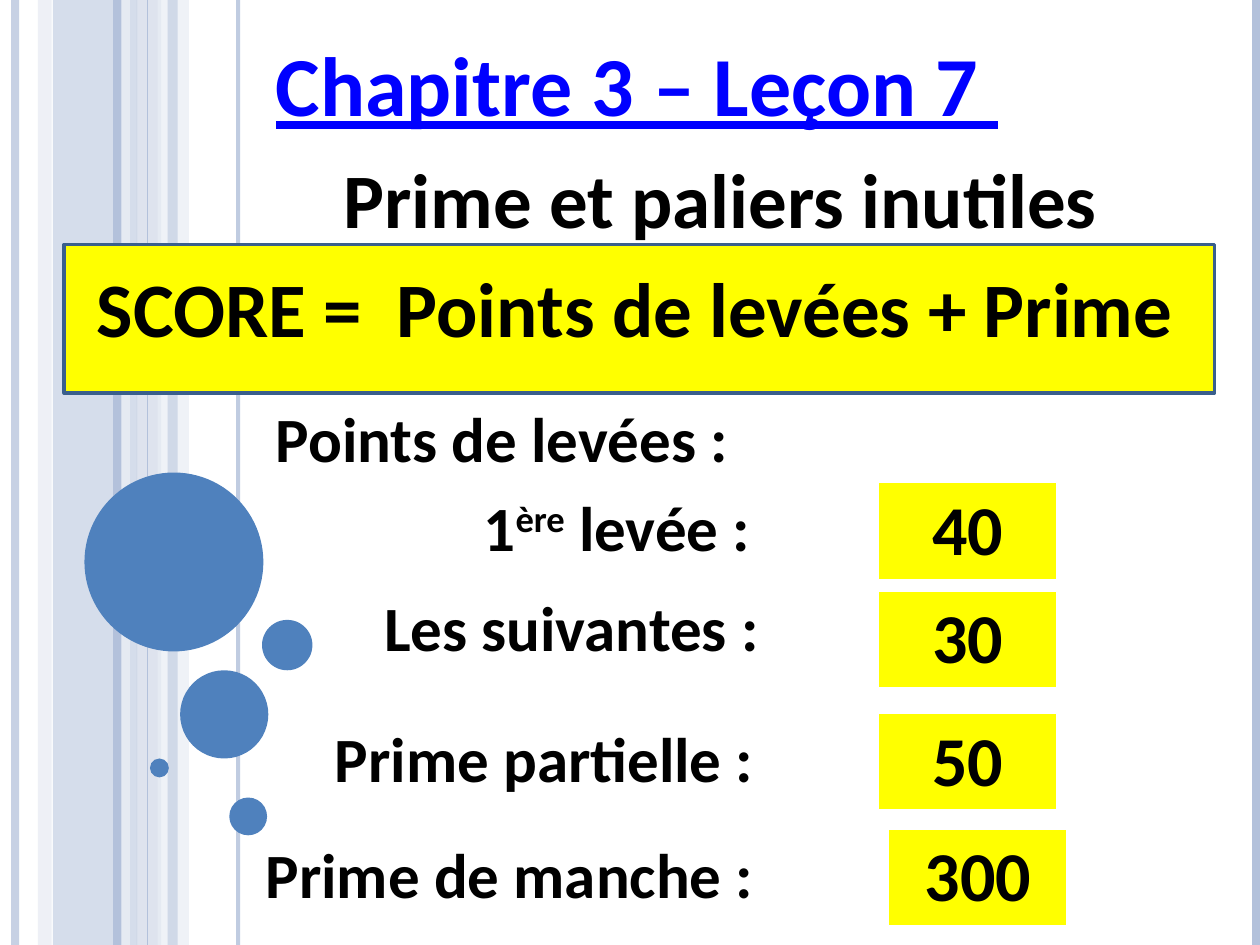
from lxml.etree import SubElement
from pptx import Presentation
from pptx.dml.color import RGBColor
from pptx.enum.shapes import MSO_CONNECTOR, MSO_SHAPE
from pptx.enum.text import MSO_ANCHOR, MSO_AUTO_SIZE, PP_ALIGN
from pptx.oxml.ns import qn
from pptx.util import Inches, Pt

FONT = "Calibri"
SLIDE_W, SLIDE_H = 10, 7.5
COLORS = {
    "mid": "B3C1DB", "light": "D0D8E8", "pale": "E9EDF4", "bubble": "4F81BD",
    "yellow": "FFFF00", "outline": "3A5F8C", "link": "0000FF",
    "black": "000000", "white": "FFFFFF",
}

# left, width, colour, opacity in percent
BANDS = [
    (0.42, 0.67, "mid", 54), (0.3, 0.11, "light", 36),
    (1.08, 0.2, "light", 70), (1.25, 0.25, "pale", 71),
]
TOP_BAND = (1.33, 0.08, "mid", 51)
# x, width in points, colour, opacity in percent
STRIPES = [
    (0.12, 4.5, "mid", 73), (1, 4.5, "pale", 83), (0.93, 4.5, "mid", 100),
    (1.89, 2.25, "mid", 82), (1.17, 0.75, "mid", 100), (9.97, 4.5, "mid", 100),
]
# left, top, diameter
BUBBLES = [
    (0.67, 3.75, 1.42), (1.43, 5.32, 0.7), (1.19, 6.02, 0.15),
    (1.82, 6.33, 0.3), (2.08, 4.92, 0.4),
]

TITLE = "Chapitre 3 – Leçon 7 "
# text, box, size, alignment
HEADINGS = [
    ("Prime et paliers inutiles ", (2.09, 1.15, 7.4, 0.84), 44, PP_ALIGN.CENTER),
    ("SCORE =  Points de levées + Prime", (0.67, 2.02, 9.06, 0.84), 44, PP_ALIGN.LEFT),
    ("Points de levées :", (2.09, 3.12, 4.02, 0.71), 36, PP_ALIGN.LEFT),
]
# label parts (text, superscript), label left, top, width, value, value left, top
SCORES = [
    ([("1", False), ("ère", True), (" levée :", False)], 3.74, 3.83, 2.44, "40", 6.97, 3.83),
    ([("Les suivantes :", False)], 2.95, 4.62, 3.31, "30", 6.97, 4.69),
    ([("Prime partielle :", False)], 2.56, 5.66, 3.54, "50", 6.97, 5.66),
    ([("Prime de manche :", False)], 2.01, 6.58, 4.25, "300", 7.05, 6.58),
]
LABEL_H = 0.71
VALUE_W, VALUE_H = 1.42, 0.77


def rgb(name):
    return RGBColor.from_string(COLORS[name])


def box(*lengths):
    return [Inches(n) for n in lengths]


def set_opacity(shape, percent):
    if percent < 100:
        for clr in shape._element.spPr.iter(qn("a:srgbClr")):
            SubElement(clr, qn("a:alpha")).set("val", str(percent * 1000))


def add_filled(slide, kind, place, color):
    sp = slide.shapes.add_shape(kind, *box(*place))
    sp.shadow.inherit = False
    sp.fill.solid()
    sp.fill.fore_color.rgb = rgb(color)
    sp.line.fill.background()
    return sp


def add_band(slide, left, width, color, opacity):
    sp = add_filled(slide, MSO_SHAPE.RECTANGLE, (left, 0, width, SLIDE_H), color)
    set_opacity(sp, opacity)


def add_stripe(slide, x, width, color, opacity):
    line = slide.shapes.add_connector(MSO_CONNECTOR.STRAIGHT, *box(x, 0, x, SLIDE_H))
    line.line.width = Pt(width)
    line.line.color.rgb = rgb(color)
    set_opacity(line, opacity)
    SubElement(line._element.spPr, qn("a:effectLst"))


def style(p, size, align=PP_ALIGN.LEFT, color="black"):
    p.alignment = align
    p.font.name = FONT
    p.font.size = Pt(size)
    p.font.bold = True
    p.font.color.rgb = rgb(color)


def add_text(slide, parts, place, size, align=PP_ALIGN.LEFT):
    tf = slide.shapes.add_textbox(*box(*place)).text_frame
    tf.word_wrap = True
    p = tf.paragraphs[0]
    style(p, size, align)
    for text, raised in parts:
        r = p.add_run()
        r.text = text
        if raised:
            r._r.get_or_add_rPr().set("baseline", "30000")


def add_value(slide, text, left, top):
    """Add a one-cell yellow table with a thin white border."""
    frame = slide.shapes.add_table(1, 1, *box(left, top, VALUE_W, VALUE_H))
    table = frame.table
    table.first_row = table.horz_banding = False
    cell = table.cell(0, 0)
    tcPr = cell._tc.get_or_add_tcPr()
    for side in ("lnL", "lnR", "lnT", "lnB"):
        ln = SubElement(tcPr, qn(f"a:{side}"), w=str(Pt(1)))
        fill = SubElement(ln, qn("a:solidFill"))
        SubElement(fill, qn("a:srgbClr"), val=COLORS["white"])
    cell.fill.solid()
    cell.fill.fore_color.rgb = rgb("yellow")
    cell.text = text
    style(cell.text_frame.paragraphs[0], 40, PP_ALIGN.CENTER)


def add_title(slide):
    title = slide.shapes.title
    title.left, title.top, title.width, title.height = box(2.09, 0.21, 7.48, 0.91)
    tf = title.text_frame
    tf.text = TITLE
    tf.auto_size = MSO_AUTO_SIZE.NONE
    tf.vertical_anchor = MSO_ANCHOR.TOP
    p = tf.paragraphs[0]
    style(p, 48, color="link")
    p.font.underline = True


def main():
    prs = Presentation()
    prs.slide_width, prs.slide_height = box(SLIDE_W, SLIDE_H)
    slide = prs.slides.add_slide(prs.slide_layouts[5])

    for band in BANDS:
        add_band(slide, *band)
    for stripe in STRIPES:
        add_stripe(slide, *stripe)
    add_band(slide, *TOP_BAND)
    for left, top, size in BUBBLES:
        add_filled(slide, MSO_SHAPE.OVAL, (left, top, size, size), "bubble")

    banner = add_filled(slide, MSO_SHAPE.RECTANGLE, (0.51, 1.94, 9.13, 1.18), "yellow")
    banner.line.color.rgb = rgb("outline")
    banner.line.width = Pt(2)

    add_title(slide)
    for text, place, size, align in HEADINGS:
        add_text(slide, [(text, False)], place, size, align)
    for parts, left, top, width, value, value_left, value_top in SCORES:
        add_value(slide, value, value_left, value_top)
        add_text(slide, parts, (left, top, width, LABEL_H), 36)

    prs.save("out.pptx")


if __name__ == "__main__":
    main()
